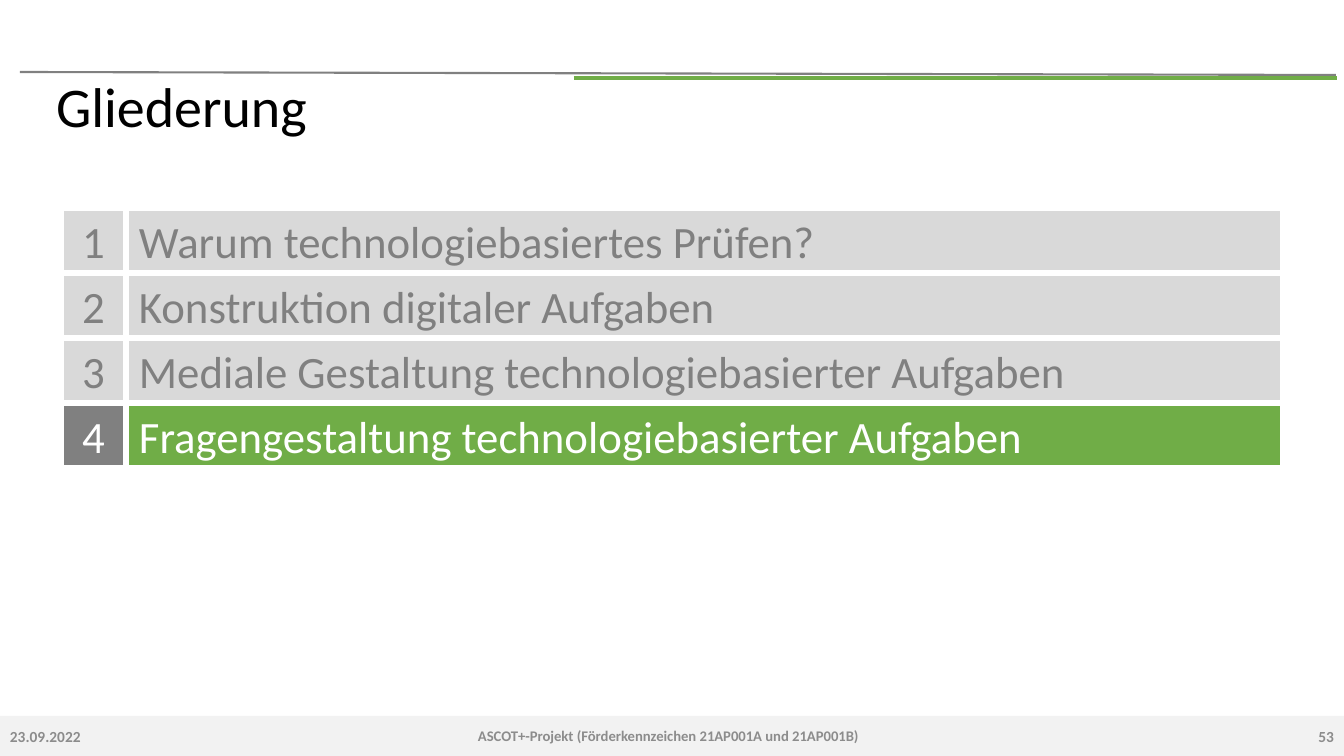
from dataclasses import dataclass

from lxml import etree
from pptx import Presentation
from pptx.dml.color import RGBColor
from pptx.enum.shapes import MSO_CONNECTOR, MSO_SHAPE
from pptx.enum.text import MSO_ANCHOR, MSO_AUTO_SIZE, PP_ALIGN
from pptx.oxml.ns import qn
from pptx.util import Emu, Pt

LEFT, CENTER, RIGHT = PP_ALIGN.LEFT, PP_ALIGN.CENTER, PP_ALIGN.RIGHT
MIDDLE = MSO_ANCHOR.MIDDLE
NO_FIT = MSO_AUTO_SIZE.NONE
RECTANGLE = MSO_SHAPE.RECTANGLE
STRAIGHT = MSO_CONNECTOR.STRAIGHT
PX = 914400 / 100.8


@dataclass(frozen=True)
class Theme:
    font: str = "Calibri"
    black: str = "000000"
    white: str = "FFFFFF"
    green: str = "70AD47"
    gray: str = "808080"
    pale: str = "D9D9D9"
    footer_band: str = "F2F2F2"
    footer_text: str = "8C8C8C"
    title_size: float = 40
    agenda_size: float = 32
    footer_size: float = 11
    project_size: float = 10.5


theme = Theme()


def px(*lengths):
    return [Emu(round(length * PX)) for length in lengths]


def write(box, text, size, color, align=LEFT, bold=False):
    frame = box.text_frame
    frame.word_wrap = True
    frame.auto_size = NO_FIT
    frame.vertical_anchor = MIDDLE
    para = frame.paragraphs[0]
    para.text = text
    para.alignment = align
    para.font.name = theme.font
    para.font.size = Pt(size)
    para.font.bold = bold
    para.font.color.rgb = RGBColor.from_string(color)
    return para


deck = Presentation()
deck.slide_width, deck.slide_height = px(1344, 756)
page = deck.slides.add_slide(deck.slide_layouts[5])
shapes = page.shapes

title = shapes.title
title.left, title.top, title.width, title.height = px(46, 80, 1230, 59)
write(title, "Gliederung", theme.title_size, theme.black).line_spacing = 0.9

band = shapes.add_shape(RECTANGLE, *px(0, 716, 1344, 40))
band.shadow.inherit = False
band.fill.solid()
band.fill.fore_color.rgb = RGBColor.from_string(theme.footer_band)
band.line.fill.background()

rules = [
    ((20, 72, 1336, 75), theme.gray, 1.5),
    ((574, 78, 1337, 78), theme.green, 2.25),
]
for ends, color, weight in rules:
    rule = shapes.add_connector(STRAIGHT, *px(*ends))
    rule.line.color.rgb = RGBColor.from_string(color)
    rule.line.width = Pt(weight)
    etree.SubElement(rule._element.spPr, qn("a:effectLst"))

footers = [
    (0, 171, "23.09.2022", theme.footer_size, LEFT),
    (171, 995, "ASCOT+-Projekt (Förderkennzeichen 21AP001A und 21AP001B)",
     theme.project_size, CENTER),
    (1179, 165, "53", theme.footer_size, RIGHT),
]
for left, width, text, size, align in footers:
    box = shapes.add_textbox(*px(left, 716, width, 40))
    write(box, text, size, theme.footer_text, align, bold=True)

agenda = [
    "Warum technologiebasiertes Prüfen?",
    "Konstruktion digitaler Aufgaben",
    "Mediale Gestaltung technologiebasierter Aufgaben",
    "Fragengestaltung technologiebasierter Aufgaben",
]
current = 4
for number, topic in enumerate(agenda, start=1):
    top = 211 + (number - 1) * 65
    active = number == current
    color = theme.white if active else theme.gray
    cells = [
        (64, 59, str(number), theme.gray, CENTER),
        (129, 1151, topic, theme.green, LEFT),
    ]
    for left, width, text, active_fill, align in cells:
        cell = shapes.add_shape(RECTANGLE, *px(left, top, width, 59))
        cell.shadow.inherit = False
        cell.fill.solid()
        cell.fill.fore_color.rgb = RGBColor.from_string(active_fill if active else theme.pale)
        cell.line.fill.background()
        write(cell, text, theme.agenda_size, color, align)

deck.save("out.pptx")
